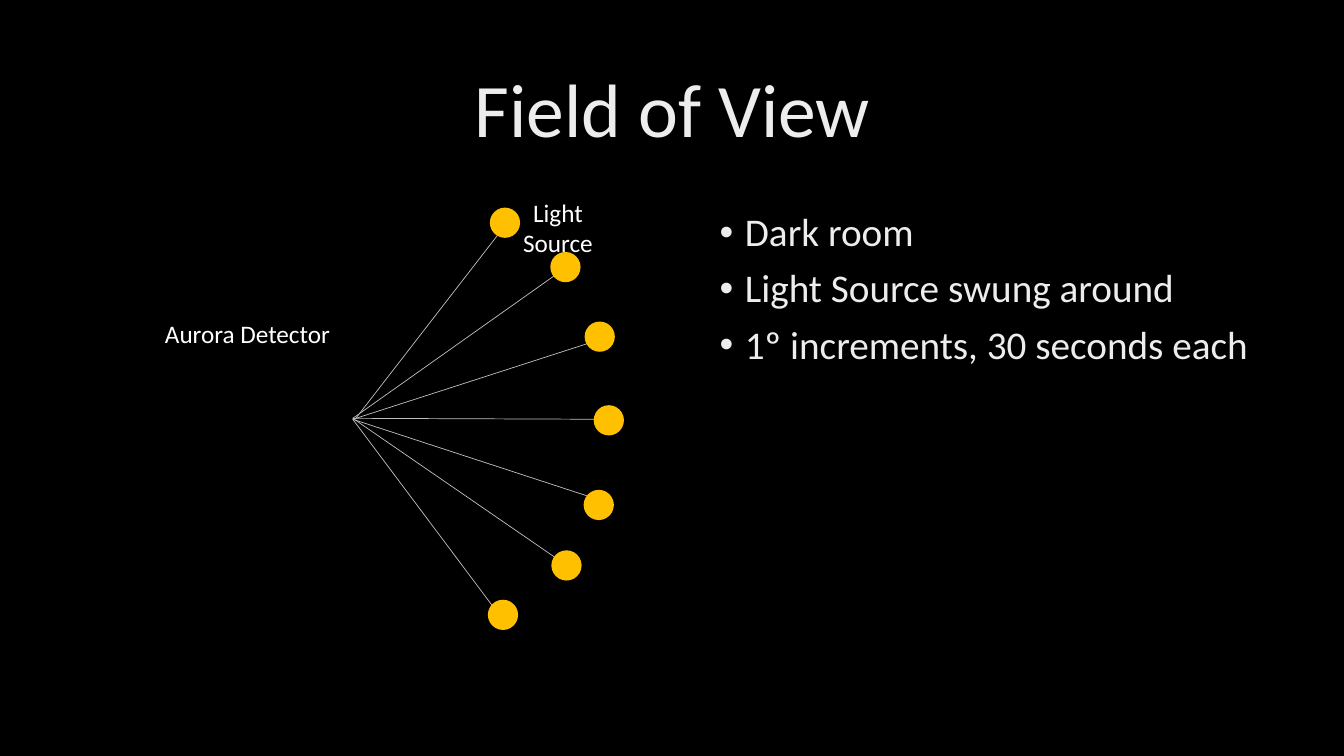
"""Build the Field of View slide."""
from typing import NamedTuple

from lxml import etree
from pptx import Presentation, util as u
from pptx.dml.color import RGBColor
from pptx.enum import shapes, text
from pptx.oxml.ns import qn

SCALE = 9144
FONT = "Calibri"
BLACK = RGBColor(0x00, 0x00, 0x00)
WHITE = RGBColor(0xFF, 0xFF, 0xFF)
PALE = RGBColor(0xED, 0xED, 0xED)
GREY = RGBColor(0xBF, 0xBF, 0xBF)
AMBER = RGBColor(0xFF, 0xC0, 0x00)
DOT = 30


class Box(NamedTuple):
    """A rectangle in px."""
    left: int
    top: int
    width: int
    height: int


class Ray(NamedTuple):
    """A line from the detector and the light at its far end, in px."""
    start: tuple[int, int]
    end: tuple[int, int]
    light: tuple[int, int]


class Label(NamedTuple):
    """A caption and its place."""
    words: list[str]
    box: Box
    wrap: bool


RAYS = [
    Ray((353, 415), (504, 220), (486, 206)),
    Ray((350, 415), (562, 265), (546, 250)),
    Ray((350, 416), (601, 335), (580, 319)),
    Ray((350, 415), (610, 416), (589, 402)),
    Ray((350, 416), (601, 498), (579, 486)),
    Ray((350, 415), (571, 567), (547, 546)),
    Ray((350, 416), (499, 615), (484, 595)),
]
LABELS = [
    Label(["Light", "Source"], Box(501, 191, 105, 71), False),
    Label(["Aurora Detector"], Box(138, 311, 215, 40), True),
]
TITLE = ["Field of View"]
STEPS = ["Dark room", "Light Source swung around", "1º increments, 30 seconds each"]


def px(*lengths: int) -> list[u.Emu]:
    """Turn px into EMU."""
    return [u.Emu(length * SCALE) for length in lengths]


def write(frame, lines: list[str], *, size: int, color: RGBColor, align,
          anchor=text.MSO_ANCHOR.TOP, wrap: bool = True, spacing: float = 1.0,
          before: int = 0, bullet: str = "") -> None:
    """Fill a text frame with one formatted paragraph per line."""
    frame.word_wrap = wrap
    frame.auto_size = text.MSO_AUTO_SIZE.NONE
    frame.vertical_anchor = anchor
    for index, line in enumerate(lines):
        para = frame.add_paragraph() if index else frame.paragraphs[0]
        para.alignment = align
        para.line_spacing = spacing
        para.space_before = u.Pt(before if index else 0)
        if bullet:
            props = para._p.get_or_add_pPr()
            props.set("marL", str(25 * SCALE))
            props.set("indent", str(-25 * SCALE))
            etree.SubElement(props, qn("a:buFont"), typeface="Arial")
            etree.SubElement(props, qn("a:buChar"), char=bullet)
        span = para.add_run()
        span.text = line
        span.font.name = FONT
        span.font.size = u.Pt(size)
        span.font.color.rgb = color


def place(shape, box: Box) -> None:
    """Move and size a placeholder."""
    shape.left, shape.top, shape.width, shape.height = px(*box)


def draw_ray(page, ray: Ray) -> None:
    """Draw the line from the detector to a light."""
    line = page.shapes.add_connector(
        shapes.MSO_CONNECTOR.STRAIGHT, *px(*ray.start, *ray.end))
    line.line.color.rgb = GREY
    line.line.width = u.Pt(0.5)
    etree.SubElement(line._element.spPr, qn("a:effectLst"))


def draw_light(page, ray: Ray) -> None:
    """Draw the light at the end of a ray."""
    dot = page.shapes.add_shape(shapes.MSO_SHAPE.OVAL, *px(*ray.light, DOT, DOT))
    dot.shadow.inherit = False
    dot.fill.solid()
    dot.fill.fore_color.rgb = AMBER
    dot.line.fill.background()


def draw_label(page, label: Label) -> None:
    """Draw a caption."""
    box = page.shapes.add_textbox(*px(*label.box))
    write(box.text_frame, label.words, size=18, color=WHITE,
          align=text.PP_ALIGN.CENTER, wrap=label.wrap)


def main() -> None:
    """Build and save the deck."""
    deck = Presentation()
    deck.slide_width, deck.slide_height = u.Inches(13.333), u.Inches(7.5)
    page = deck.slides.add_slide(deck.slide_layouts[1])
    page.background.fill.solid()
    page.background.fill.fore_color.rgb = BLACK

    title, body = page.placeholders
    place(title, Box(92, 40, 1150, 145))
    write(title.text_frame, TITLE, size=54, color=PALE, spacing=0.9,
          align=text.PP_ALIGN.CENTER, anchor=text.MSO_ANCHOR.MIDDLE)
    place(body, Box(704, 206, 550, 476))
    write(body.text_frame, STEPS, size=28, color=PALE, spacing=0.9,
          align=text.PP_ALIGN.LEFT, before=10, bullet="•")

    for ray in RAYS:
        draw_ray(page, ray)
    for ray in RAYS:
        draw_light(page, ray)
    for label in LABELS:
        draw_label(page, label)
    deck.save("out.pptx")


if __name__ == "__main__":
    main()
